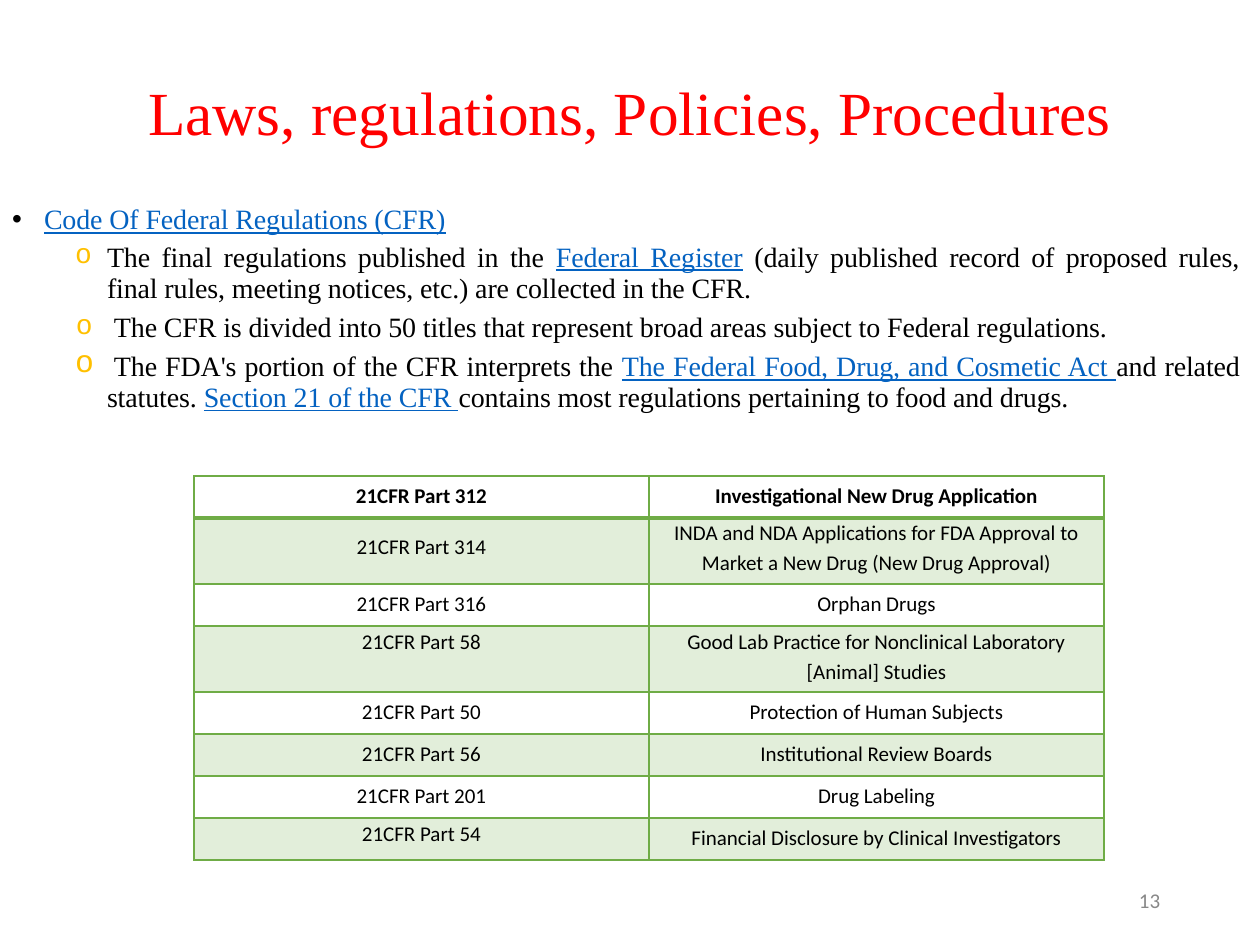
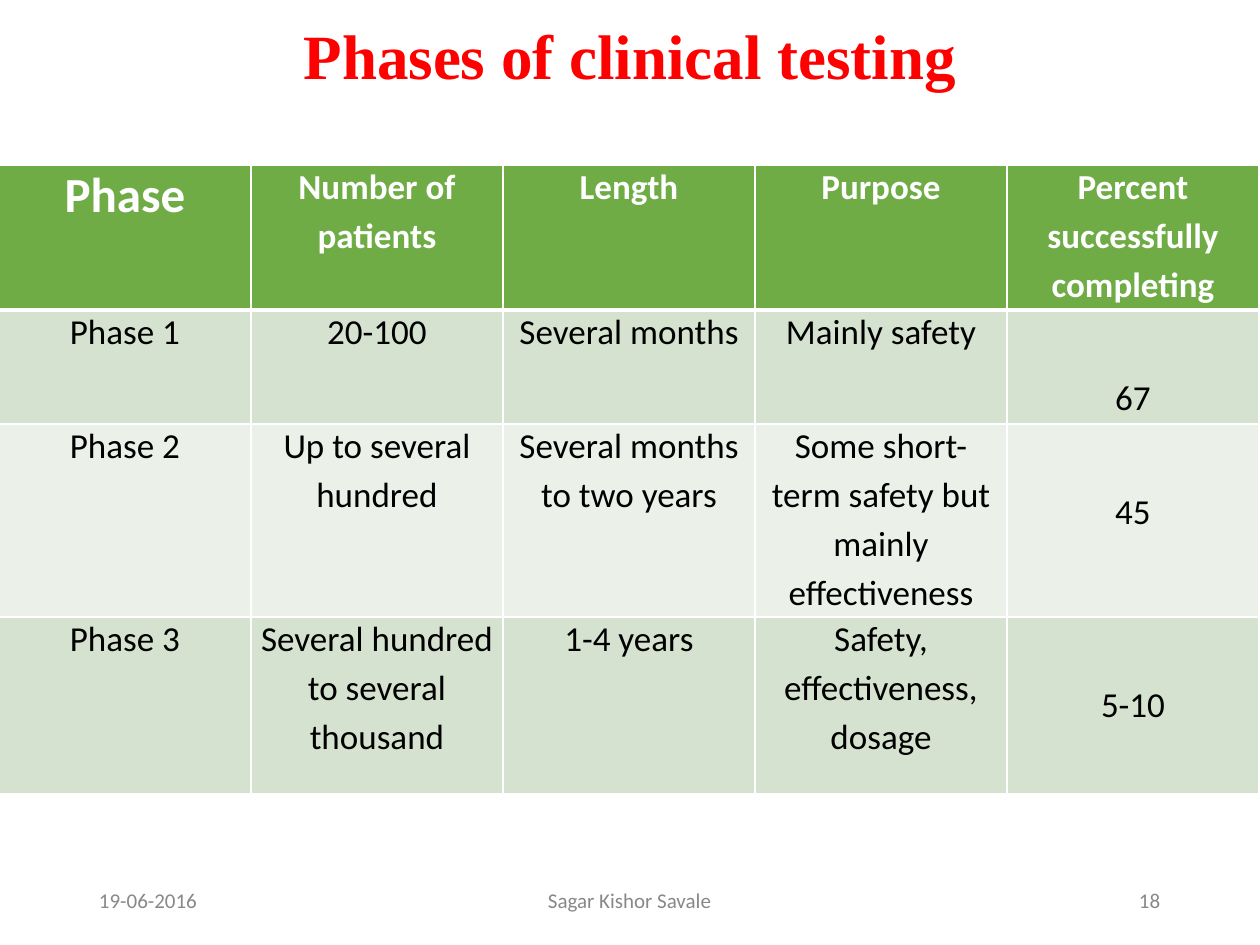
from lxml.etree import SubElement
from pptx import Presentation
from pptx.dml.color import RGBColor
from pptx.enum.text import PP_ALIGN
from pptx.oxml.ns import qn
from pptx.util import Pt

COLORS = {
    "title": "FF0000", "text": "000000", "link": "0462C1", "bullet": "FFC000",
    "footer": "888888", "green": "6FAC46", "mint": "E2EEDA", "white": "FFFFFF",
    "sage": "D4E2CF", "pale": "EBF0E9",
}
SERIF, SANS = "Times New Roman", "Calibri"
WIDTH, HEIGHT = 1260, 945
FOOTER_TOP = 891


def px(n):
    return round(n * 914400 / 126)


class Deck:
    def __init__(self):
        self.prs = Presentation()
        self.prs.slide_width, self.prs.slide_height = px(WIDTH), px(HEIGHT)
        self.s = None

    def slide(self):
        self.s = self.prs.slides.add_slide(self.prs.slide_layouts[6])

    def run(self, p, text, size, color="text", font=SANS, bold=False, underline=False, spc=0):
        r = p.add_run()
        r.text = text
        r.font.size, r.font.name = Pt(size), font
        r.font.bold, r.font.underline = bold, underline
        r.font.color.rgb = RGBColor.from_string(COLORS[color])
        if spc:
            r._r.get_or_add_rPr().set("spc", str(spc))

    def box(self, x, y, w, h, top=0, wrap=True):
        tf = self.s.shapes.add_textbox(px(x), px(y), px(w), px(h)).text_frame
        tf.margin_left = tf.margin_right = tf.margin_bottom = 0
        tf.margin_top = px(top)
        tf.word_wrap = wrap
        return tf

    def title(self, text, y, size, bold=False):
        p = self.box(0, y, WIDTH, 78, 1).paragraphs[0]
        p.alignment = PP_ALIGN.CENTER
        p.space_before = Pt(1)
        self.run(p, text, size, "title", SERIF, bold)

    def footer(self, text, x, w):
        p = self.box(x, FOOTER_TOP, w, 25, wrap=False).paragraphs[0]
        p.line_spacing = Pt(12.4)
        self.run(p, text, 12, "footer")

    def bullet(self, p, char, font, color, left, hang, before, leading=None, tab=None):
        p.space_before = Pt(before)
        if leading:
            p.line_spacing = Pt(leading)
        pPr = p._p.get_or_add_pPr()
        pPr.set("marL", str(px(left)))
        pPr.set("indent", str(-px(hang)))
        SubElement(SubElement(pPr, qn("a:buClr")), qn("a:srgbClr"), val=COLORS[color])
        SubElement(pPr, qn("a:buFont"), typeface=font)
        SubElement(pPr, qn("a:buChar"), char=char)
        if tab:
            tabs = SubElement(pPr, qn("a:tabLst"))
            SubElement(tabs, qn("a:tab"), pos=str(px(tab)), algn="l")

    def body_runs(self, p, parts):
        for kind, text in parts:
            if kind == "break":
                p.add_line_break()
            elif kind == "tab":
                self.run(p, text, 18)
            else:
                self.run(p, text, 16, kind, SERIF, underline=kind == "link", spc=-5)

    def borders(self, cell, color, widths):
        tcPr = cell._tc.get_or_add_tcPr()
        for side, width in zip("LRTB", widths):
            ln = SubElement(tcPr, qn("a:ln" + side), w=str(Pt(width)))
            fill = SubElement(ln, qn("a:solidFill"))
            SubElement(fill, qn("a:srgbClr"), val=COLORS[color])

    def cell(self, cell, text, top, size, color, bold, fill, gap):
        cell.margin_left = cell.margin_right = cell.margin_bottom = 0
        cell.margin_top = px(top)
        cell.fill.solid()
        cell.fill.fore_color.rgb = RGBColor.from_string(COLORS[fill])
        tf = cell.text_frame
        for i, line in enumerate(text.split("\n")):
            p = tf.add_paragraph() if i else tf.paragraphs[0]
            p.alignment = PP_ALIGN.CENTER
            if i:
                p.space_before = Pt(gap)
            self.run(p, line, size, color, bold=bold)

    def table(self, x, y, col, heights, rows, fills, tops, size, gap, line, rule,
              head_color="text", head_sizes=None):
        n = len(rows[0])
        t = self.s.shapes.add_table(len(rows), n, px(x), px(y), px(col * n), px(sum(heights))).table
        t.first_row = t.horz_banding = False
        for c in t.columns:
            c.width = px(col)
        for i, row in enumerate(rows):
            t.rows[i].height = px(heights[i])
            head = i == 0
            for j, text in enumerate(row):
                cell = t.cell(i, j)
                self.borders(cell, line, (1, 1, rule if i == 1 else 1, rule if head else 1))
                self.cell(cell, text, tops[i][j],
                          head_sizes[j] if head and head_sizes else size,
                          head_color if head else "text", head, fills[i], gap)


REGULATIONS = [
    ("21CFR Part 312", "Investigational New Drug Application"),
    ("21CFR Part 314", "INDA and NDA Applications for FDA Approval to\nMarket a New Drug (New Drug Approval)"),
    ("21CFR Part 316", "Orphan Drugs"),
    ("21CFR Part 58", "Good Lab Practice for Nonclinical Laboratory\n[Animal] Studies"),
    ("21CFR Part 50", "Protection of Human Subjects"),
    ("21CFR Part 56", "Institutional Review Boards"),
    ("21CFR Part 201", "Drug Labeling"),
    ("21CFR Part 54", "Financial Disclosure by Clinical Investigators"),
]

PHASES = [
    ("Phase", "Number of\npatients", "Length", "Purpose", "Percent\nsuccessfully\ncompleting"),
    ("Phase 1", "20-100", "Several months", "Mainly safety", "67"),
    ("Phase 2", "Up to several\nhundred", "Several months\nto two years",
     "Some short-\nterm safety but\nmainly\neffectiveness", "45"),
    ("Phase 3", "Several hundred\nto several\nthousand", "1-4 years",
     "Safety,\neffectiveness,\ndosage", "5-10"),
]


def regulations_slide(d):
    d.slide()
    d.footer("13", 1139, 27)
    tf = d.box(11, 194, 1229, 221, 8)
    p = tf.paragraphs[0]
    d.bullet(p, "•", "Arial", "text", 33, 32, 4)
    d.body_runs(p, [("link", "Code Of Federal Regulations (CFR)")])

    points = [
        (96, 32, 3, 18.2, None, [
            ("text", "The final regulations published in the "),
            ("link", "Federal Register"),
            ("text", " (daily published record of proposed rules,"),
            ("break", ""),
            ("text", "final rules, meeting notices, etc.) are collected in the CFR."),
        ]),
        (103, 38, 3.1, None, None, [
            ("text", "The CFR is divided into 50 titles that represent broad areas "
                     "subject to Federal regulations."),
        ]),
        (96, 32, 5.2, 17.3, 103, [
            ("tab", "\t"),
            ("text", "The FDA's portion of the CFR interprets the "),
            ("link", "The Federal Food, Drug, and Cosmetic Act "),
            ("text", "and related"),
            ("break", ""),
            ("text", "statutes. "),
            ("link", "Section 21 of the CFR "),
            ("text", "contains most regulations pertaining to food and drugs."),
        ]),
    ]
    for left, hang, before, leading, tab, parts in points:
        p = tf.add_paragraph()
        p.alignment = PP_ALIGN.JUSTIFY
        d.bullet(p, "o", "Courier New", "bullet", left, hang, before, leading, tab)
        d.body_runs(p, parts)

    d.title("Laws, regulations, Policies, Procedures", 73, 35)
    tops = [(8, 8)] * 8
    tops[1], tops[3], tops[7] = (17, 3), (4, 4), (4, 8)
    d.table(194, 476, 455, [42, 66, 42, 66, 42, 42, 42, 42], REGULATIONS,
            ["white", "mint"] * 4, tops, 12, 2.1, "green", 2.25)


def phases_slide(d):
    d.slide()
    d.footer("19-06-2016", 99, 102)
    d.footer("Sagar Kishor Savale", 548, 166)
    d.footer("18", 1139, 27)
    d.title("Phases of clinical testing", 16, 36, True)
    tops = [(1,) * 5] + [(1, 1, 1, 1, 67)] * 3
    d.table(-1, 165, 252, [145, 114, 193, 177], PHASES,
            ["green", "sage", "pale", "sage"], tops, 20, 3.6, "white", 3,
            "white", [28, 20, 20, 20, 20])


def main():
    d = Deck()
    regulations_slide(d)
    phases_slide(d)
    d.prs.save("out.pptx")


if __name__ == "__main__":
    main()
